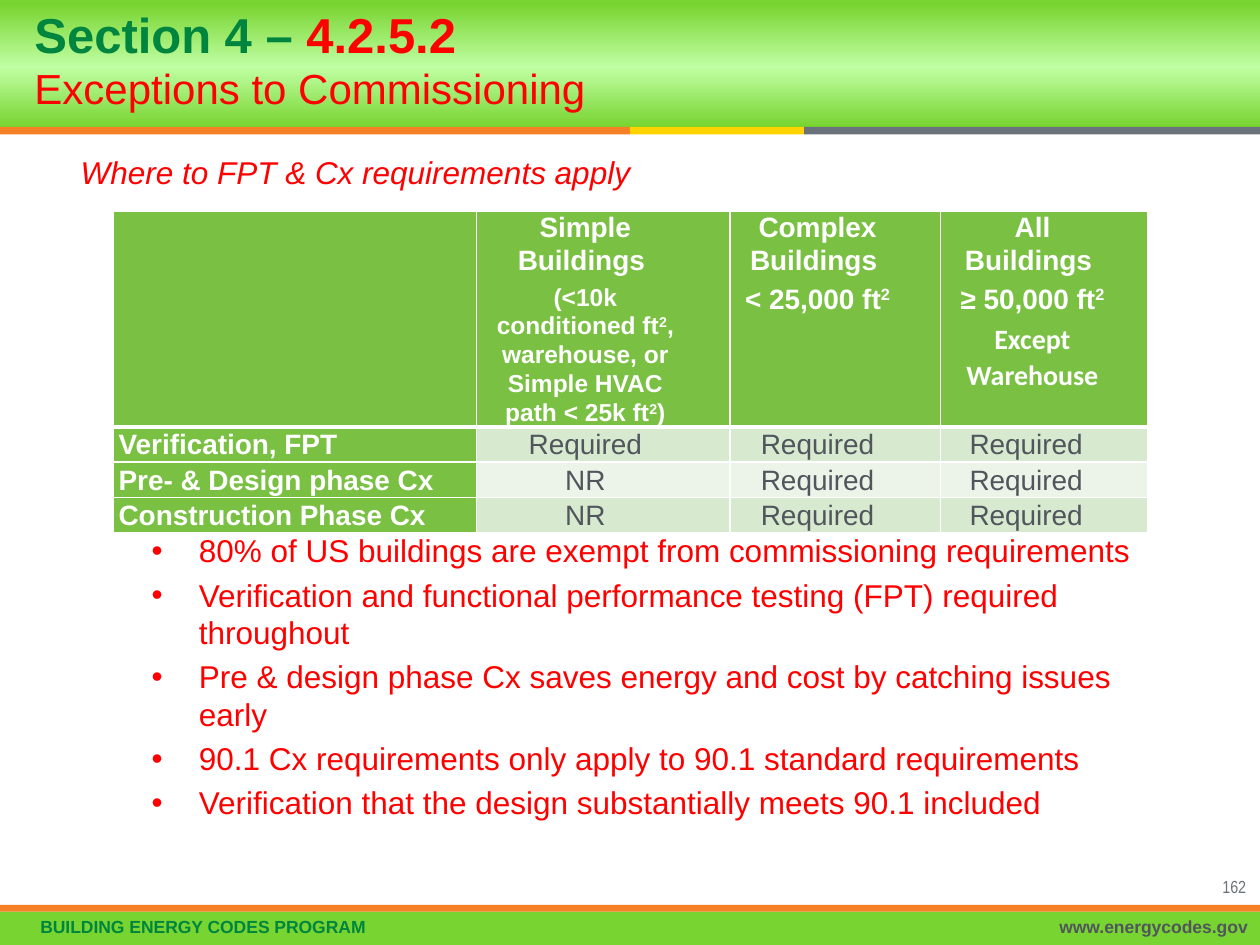
"""Build the slide on exceptions to commissioning."""
from copy import deepcopy
from dataclasses import dataclass

from lxml import etree
from pptx import Presentation
from pptx import util as u
from pptx.dml.color import RGBColor as Rgb
from pptx.enum import shapes, text
from pptx.oxml import ns

Pt = u.Pt
ALIGN = text.PP_ALIGN
ANCHOR = text.MSO_ANCHOR


@dataclass(frozen=True)
class Theme:
    """Colours, fonts and type sizes."""
    lime: str = "78D430"
    pale: str = "C0FFA4"
    green: str = "00853F"
    red: str = "FF0000"
    orange: str = "F58025"
    gold: str = "FFD200"
    grey: str = "6A737B"
    ink: str = "50565C"
    white: str = "FFFFFF"
    head: str = "7AC143"
    odd: str = "D7E9CF"
    even: str = "ECF4E9"
    font: str = "Arial"
    narrow: str = "Arial Narrow"
    sans: str = "Calibri"
    title: int = 28
    sub: int = 24
    body: int = 18
    cell: int = 16
    note: int = 14
    small: int = 10


T = Theme()


@dataclass(frozen=True)
class Box:
    """A place on the slide in points."""
    left: float
    top: float
    width: float
    height: float

    def size(self) -> tuple:
        """Return the four lengths."""
        return tuple(map(Pt, (self.left, self.top, self.width, self.height)))


@dataclass(frozen=True)
class Style:
    """The look of a run."""
    size: int
    color: str
    bold: bool = False
    italic: bool = False
    font: str = T.font
    raised: bool = False


@dataclass(frozen=True)
class Bar:
    """A plain coloured strip."""
    box: Box
    color: str


@dataclass(frozen=True)
class Label:
    """A line of text in its own box."""
    box: Box
    words: str
    style: Style
    align: ALIGN = ALIGN.LEFT
    pitch: float = 1.0


HEAD = Style(T.cell, T.white, bold=True)
NOTE = Style(T.note, T.white, bold=True)
CALIBRI = Style(T.cell, T.white, bold=True, font=T.sans)
VALUE = Style(T.cell, T.ink)
POINT = Style(T.body, T.red)

BARS = (
    Bar(Box(0, 521, 720, 19), T.lime),
    Bar(Box(0, 72.5, 360, 4.3), T.orange),
    Bar(Box(360, 72.5, 99.5, 4.3), T.gold),
    Bar(Box(459.5, 72.5, 260.5, 4.3), T.grey),
    Bar(Box(0, 517, 720, 4), T.orange),
)
LABELS = (
    Label(Box(16, 521.3, 560, 18.7), "BUILDING ENERGY CODES PROGRAM",
          Style(T.small, T.green, bold=True), pitch=0.9),
    Label(Box(431.3, 521.3, 288.7, 18.7), "www.energycodes.gov",
          Style(T.small, T.ink, bold=True), ALIGN.RIGHT, 0.9),
    Label(Box(668, 496.8, 51.2, 13), "162",
          Style(T.small, T.grey, font=T.narrow), ALIGN.RIGHT),
    Label(Box(39, 83.8, 572, 29), "Where to FPT & Cx requirements apply",
          Style(T.body, T.red, italic=True)),
)
POINTS = (
    "80% of US buildings are exempt from commissioning requirements",
    "Verification and functional performance testing (FPT) required throughout",
    "Pre & design phase Cx saves energy and cost by catching issues early",
    "90.1 Cx requirements only apply to 90.1 standard requirements",
    "Verification that the design substantially meets 90.1 included",
)
WIDTHS = (207.4, 145.1, 120.3, 118.2)
HEIGHTS = (62.6, 20.2, 20.2, 20.2)
TOPS = (
    (),
    (("Simple Buildings ", HEAD),
     ("(<10k conditioned ft^2^, warehouse, or Simple HVAC path < 25k ft^2^)", NOTE)),
    (("Complex Buildings ", HEAD), ("< 25,000 ft^2^", HEAD)),
    (("All Buildings ", HEAD), ("≥ 50,000 ft^2^", HEAD), ("Except Warehouse", CALIBRI)),
)
ROWS = (
    ("Verification, FPT", "Required", "Required", "Required"),
    ("Pre- & Design phase Cx", "NR", "Required", "Required"),
    ("Construction Phase Cx", "NR", "Required", "Required"),
)


def dress(run, style: Style) -> None:
    """Apply a style to a run."""
    font = run.font
    font.name, font.size = style.font, Pt(style.size)
    font.bold, font.italic = style.bold, style.italic
    font.color.rgb = Rgb.from_string(style.color)
    if style.raised:
        font._element.set("baseline", "30000")


def write(para, words: str, style: Style) -> None:
    """Write a paragraph, raising the parts between carets."""
    high = Style(style.size, style.color, style.bold, font=style.font, raised=True)
    for i, part in enumerate(words.split("^")):
        run = para.add_run()
        run.text = part
        dress(run, high if i % 2 else style)


def draw_bar(slide, bar: Bar):
    """Draw a strip and return its shape."""
    shape = slide.shapes.add_shape(shapes.MSO_SHAPE.RECTANGLE, *bar.box.size())
    shape.shadow.inherit = False
    shape.fill.solid()
    shape.fill.fore_color.rgb = Rgb.from_string(bar.color)
    shape.line.fill.background()
    return shape


def draw_top(slide) -> None:
    """Draw the banner with its three-stop gradient."""
    fill = draw_bar(slide, Bar(Box(0, 0, 720, 72.5), T.lime)).fill
    fill.gradient()
    fill.gradient_angle = 90
    first = fill.gradient_stops[0]._gs
    first.addnext(deepcopy(first))
    stops = ((0, T.lime), (0.47, T.pale), (0.97, T.lime))
    for stop, (place, color) in zip(fill.gradient_stops, stops):
        stop.position = place
        stop.color.rgb = Rgb.from_string(color)


def draw_label(slide, label: Label) -> None:
    """Draw one line of text."""
    frame = slide.shapes.add_textbox(*label.box.size()).text_frame
    frame.word_wrap = True
    para = frame.paragraphs[0]
    para.alignment, para.line_spacing = label.align, label.pitch
    write(para, label.words, label.style)


def draw_title(slide) -> None:
    """Fill the title and bring it above the banner."""
    title = slide.shapes.title
    title.left, title.top, title.width, title.height = Box(12.5, 0, 448, 72.5).size()
    frame = title.text_frame
    frame.word_wrap, frame.vertical_anchor = True, ANCHOR.MIDDLE
    para = frame.paragraphs[0]
    para.text = "Section 4 – "
    para.alignment, para.line_spacing = ALIGN.LEFT, Pt(28)
    dress(para.runs[0], Style(T.title, T.green, bold=True))
    write(para, "4.2.5.2", Style(T.title, T.red, bold=True))
    para.add_line_break()
    write(para, "Exceptions to Commissioning", Style(T.sub, T.red))
    slide.shapes._spTree.append(title._element)


def draw_points(slide) -> None:
    """Draw the bulleted list."""
    frame = slide.shapes.add_textbox(*Box(79.5, 300.2, 600, 202).size()).text_frame
    frame.word_wrap = True
    for i, words in enumerate(POINTS):
        para = frame.add_paragraph() if i else frame.paragraphs[0]
        para.space_before = Pt(3.6 if i else 0)
        props = para._p.get_or_add_pPr()
        props.set("marL", str(Pt(27)))
        props.set("indent", str(Pt(-27)))
        etree.SubElement(props, ns.qn("a:buFont"), typeface=T.font)
        etree.SubElement(props, ns.qn("a:buChar"), char="•")
        write(para, words, POINT)


def edge(cell, row: int) -> None:
    """Rule a cell in white, heavier under the header."""
    props = cell._tc.get_or_add_tcPr()
    for side in "LRTB":
        thick = (row, side) in ((0, "B"), (1, "T"))
        line = etree.SubElement(props, ns.qn(f"a:ln{side}"), w=str(Pt(3 if thick else 1)))
        solid = etree.SubElement(line, ns.qn("a:solidFill"))
        etree.SubElement(solid, ns.qn("a:srgbClr"), val=T.white)


def draw_cell(cell, row: int, col: int, paras: tuple) -> None:
    """Rule, fill and write one cell."""
    edge(cell, row)
    cell.fill.solid()
    tint = T.odd if row % 2 else T.even
    cell.fill.fore_color.rgb = Rgb.from_string(tint if row and col else T.head)
    cell.margin_left = cell.margin_right = Pt(3)
    cell.margin_top = cell.margin_bottom = 0
    cell.vertical_anchor = ANCHOR.MIDDLE if row else ANCHOR.TOP
    for i, (words, style) in enumerate(paras):
        para = cell.text_frame.add_paragraph() if i else cell.text_frame.paragraphs[0]
        para.alignment = ALIGN.CENTER if col else ALIGN.LEFT
        para.line_spacing, para.space_before = 1.05, Pt(3.5 if i else 0)
        props = para._p.get_or_add_pPr()
        props.set("marL", str(Pt(0 if row or col < 3 else 7.2)))
        props.set("marR", str(Pt(20.5 if col else 0)))
        props.set("indent", "0")
        write(para, words, style)


def draw_table(slide) -> None:
    """Draw the table of requirements."""
    box = Box(64.8, 120.6, sum(WIDTHS), 175.7)
    frame = slide.shapes.add_table(len(HEIGHTS), len(WIDTHS), *box.size())
    table = frame.table
    for col, width in zip(table.columns, WIDTHS):
        col.width = Pt(width)
    for row, height in zip(table.rows, HEIGHTS):
        row.height = Pt(height)
    frame.height = Pt(box.height)
    body = [[((words, VALUE if c else HEAD),) for c, words in enumerate(row)] for row in ROWS]
    for r, row in enumerate([TOPS, *body]):
        for c, paras in enumerate(row):
            draw_cell(table.cell(r, c), r, c, paras)


def main() -> None:
    """Build and save the slide."""
    deck = Presentation()
    deck.slide_width, deck.slide_height = Pt(720), Pt(540)
    slide = deck.slides.add_slide(deck.slide_layouts[5])
    draw_top(slide)
    for bar in BARS:
        draw_bar(slide, bar)
    draw_title(slide)
    draw_table(slide)
    draw_points(slide)
    for label in LABELS:
        draw_label(slide, label)
    deck.save("out.pptx")


if __name__ == "__main__":
    main()
